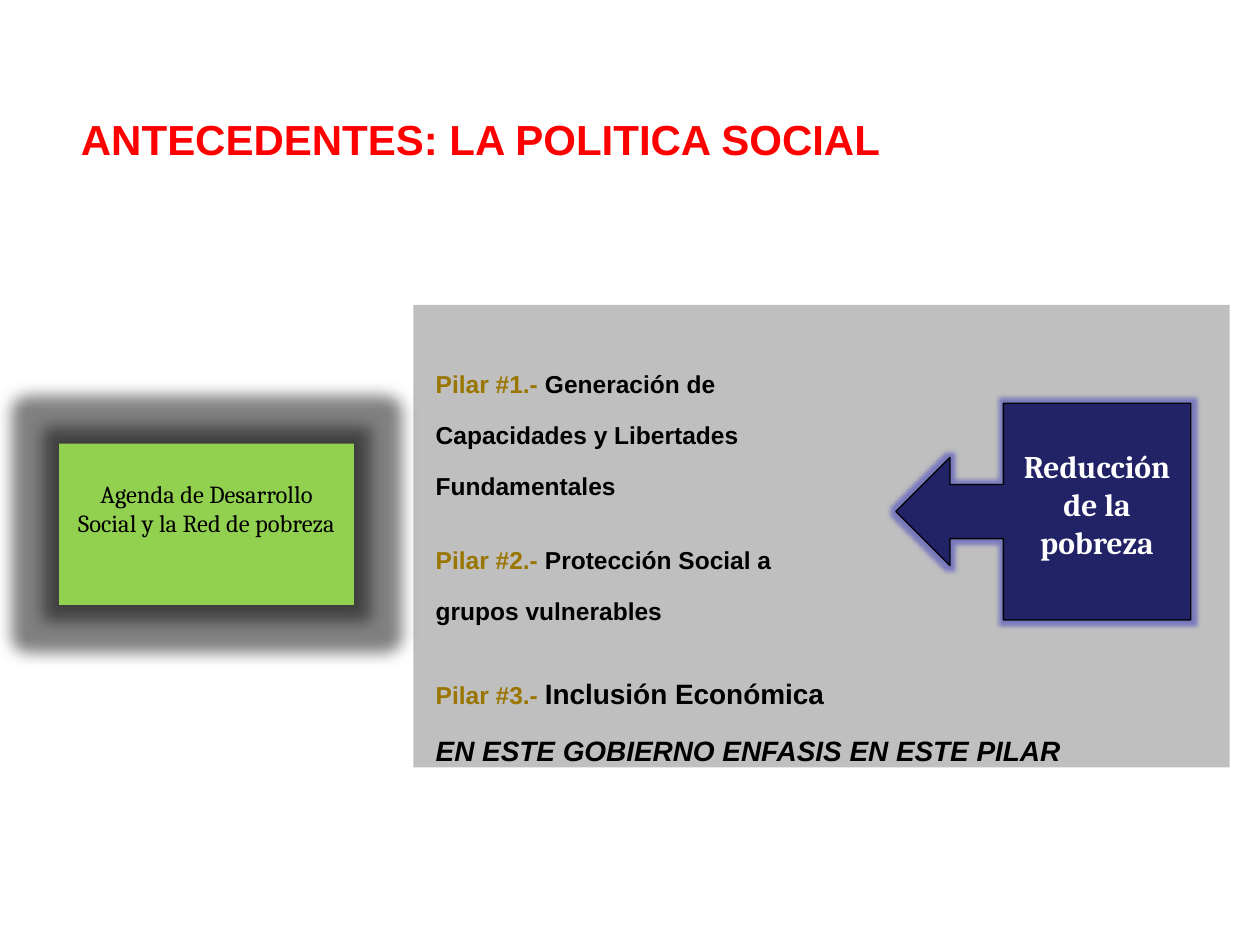
from dataclasses import dataclass

from lxml.etree import SubElement
from pptx import Presentation
from pptx.dml.color import RGBColor
from pptx.enum.shapes import MSO_SHAPE
from pptx.enum.text import MSO_ANCHOR, PP_ALIGN
from pptx.oxml.ns import qn
from pptx.util import Inches, Pt

COLORS = {
    "title": "FF0000", "panel": "BFBFBF", "pillar": "9A7500", "agenda": "92D050",
    "goal": "222267", "goal_glow": "3333BB", "black": "000000", "white": "FFFFFF",
}
CELL = Inches(0.1)  # the slide is a grid of 100 columns by 75 rows


@dataclass(frozen=True)
class Area:
    col: float
    row: float
    cols: float
    rows: float

    def lengths(self) -> list[int]:
        return [round(n * CELL) for n in (self.col, self.row, self.cols, self.rows)]


@dataclass(frozen=True)
class Span:
    text: str
    size: float
    color: str
    font: str = "Arial"
    bold: bool = True
    italic: bool = False


@dataclass(frozen=True)
class Line:
    spans: tuple[Span, ...]
    space_before: float = 3.9


@dataclass(frozen=True)
class Glow:
    radius: float
    color: str
    opacity: int


def rgb(name: str) -> RGBColor:
    return RGBColor.from_string(COLORS[name])


def add_span(paragraph, span: Span) -> None:
    run = paragraph.add_run()
    run.text = span.text
    font = run.font
    font.name, font.size = span.font, Pt(span.size)
    font.bold, font.italic = span.bold, span.italic
    font.color.rgb = rgb(span.color)


def add_text(slide, area: Area, lines: list[Line], align, anchor, spacing: float = 1.0) -> None:
    frame = slide.shapes.add_textbox(*area.lengths()).text_frame
    frame.word_wrap = True
    frame.vertical_anchor = anchor
    for index, line in enumerate(lines):
        paragraph = frame.add_paragraph() if index else frame.paragraphs[0]
        paragraph.alignment = align
        paragraph.line_spacing = spacing
        paragraph.space_before = Pt(line.space_before if index else 0)
        for span in line.spans:
            add_span(paragraph, span)


def add_block(slide, preset, area: Area, fill: str, outline: str | None = None):
    block = slide.shapes.add_shape(preset, *area.lengths())
    block.shadow.inherit = False
    block.fill.solid()
    block.fill.fore_color.rgb = rgb(fill)
    if outline:
        block.line.color.rgb = rgb(outline)
        block.line.width = Pt(0.75)
    else:
        block.line.fill.background()
    return block


def label_block(block, span: Span, top_margin: float) -> None:
    frame = block.text_frame
    frame.word_wrap = True
    frame.vertical_anchor = MSO_ANCHOR.TOP
    frame.margin_top = Inches(top_margin)
    frame.paragraphs[0].alignment = PP_ALIGN.CENTER
    add_span(frame.paragraphs[0], span)


def add_effect(block, tag: str, glow: Glow, **attributes: str) -> None:
    """Add a glow or a centred blurred shadow to the block's effect list."""
    effects = block._element.spPr.find(qn("a:effectLst"))
    effect = SubElement(effects, qn(tag), attributes)
    effect.set("rad" if tag == "a:glow" else "blurRad", str(Pt(glow.radius)))
    color = SubElement(effect, qn("a:srgbClr"), val=COLORS[glow.color])
    SubElement(color, qn("a:alpha"), val=str(glow.opacity * 1000))


def pillar(number: int, name: str, size: float = 14, space_before: float = 3.9) -> Line:
    heading = Span(f"Pilar #{number}.- ", 14, "pillar")
    return Line((heading, Span(name, size, "black")), space_before)


def continuation(text: str, size: float = 14, italic: bool = False) -> Line:
    return Line((Span(text, size, "black", italic=italic),))


PILLARS = [
    pillar(1, "Generación de"),
    continuation("Capacidades y Libertades"),
    continuation("Fundamentales"),
    pillar(2, "Protección Social a", space_before=17.6),
    continuation("grupos vulnerables"),
    pillar(3, "Inclusión Económica", size=16, space_before=19.3),
    continuation("EN ESTE GOBIERNO ENFASIS EN ESTE PILAR", size=16, italic=True),
]


def main() -> None:
    deck = Presentation()
    deck.slide_width, deck.slide_height = 100 * CELL, 75 * CELL
    slide = deck.slides.add_slide(deck.slide_layouts[6])

    add_block(slide, MSO_SHAPE.RECTANGLE, Area(32.8, 24.2, 64.8, 36.7), "panel")
    add_text(slide, Area(33.6, 27.6, 63.3, 32.5), PILLARS,
             PP_ALIGN.LEFT, MSO_ANCHOR.TOP, spacing=1.5)

    agenda = add_block(slide, MSO_SHAPE.RECTANGLE, Area(4.7, 35.2, 23.4, 12.8), "agenda")
    add_effect(agenda, "a:glow", Glow(18, "black", 40))
    add_effect(agenda, "a:outerShdw", Glow(5, "black", 40), algn="ctr", rotWithShape="0")
    label_block(agenda, Span("Agenda de Desarrollo Social y la Red de pobreza",
                             14, "black", "Cambria", bold=False), 0.28)

    goal = add_block(slide, MSO_SHAPE.LEFT_ARROW_CALLOUT,
                     Area(71.1, 32, 23.4, 17.2), "goal", "black")
    for index, share in enumerate((0.25, 0.25, 0.25, 0.635)):
        goal.adjustments[index] = share
    add_effect(goal, "a:glow", Glow(5, "goal_glow", 50))
    label_block(goal, Span("Reducción de la pobreza", 18, "white", "Cambria"), 0.35)

    title = Line((Span("ANTECEDENTES: LA POLITICA SOCIAL", 24, "title"),))
    add_text(slide, Area(5.1, 3.6, 66.1, 14.8), [title], PP_ALIGN.CENTER, MSO_ANCHOR.MIDDLE)

    deck.save("out.pptx")


if __name__ == "__main__":
    main()
